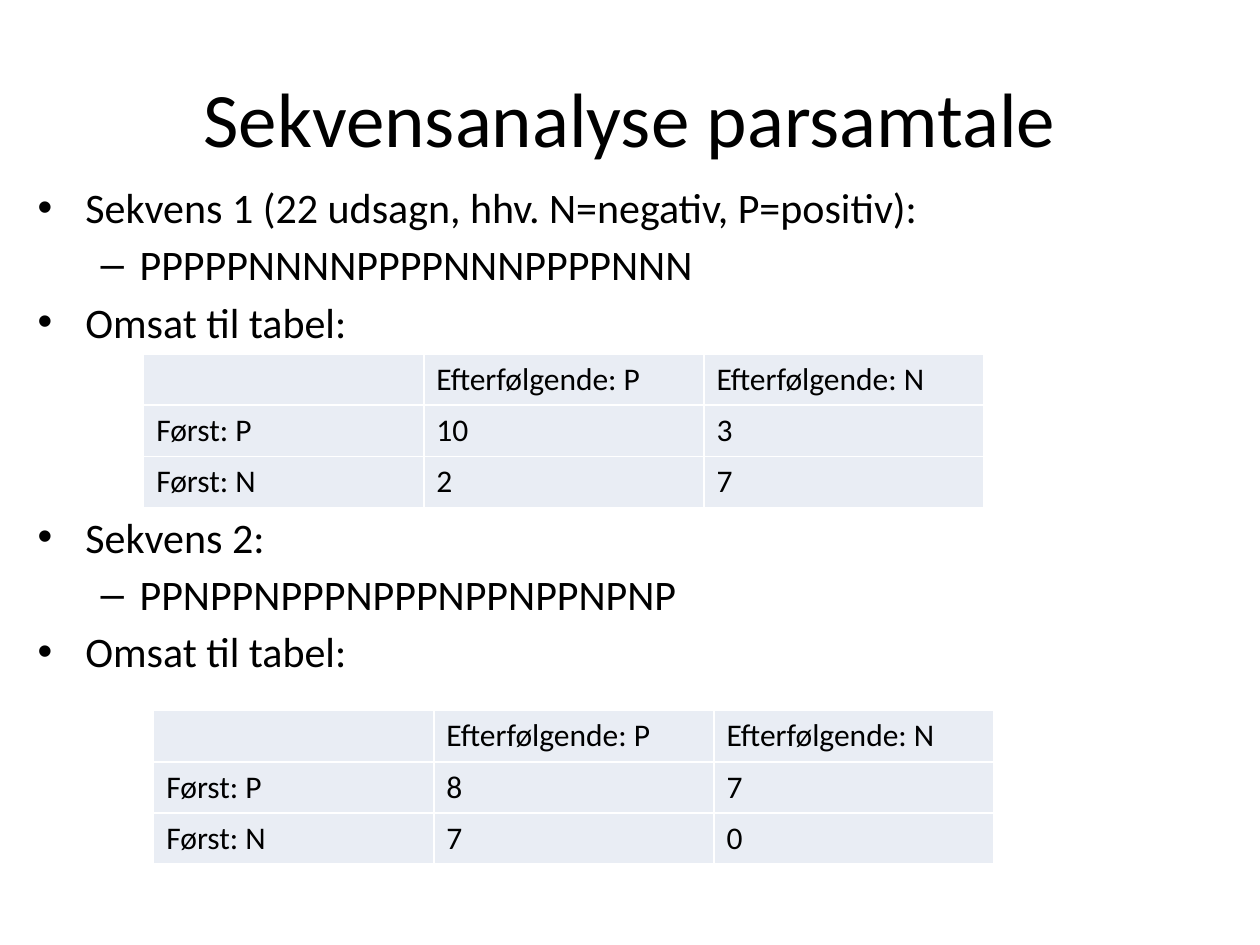
from lxml import etree
from pptx import Presentation
from pptx.dml.color import RGBColor
from pptx.enum.text import MSO_ANCHOR, PP_ALIGN
from pptx.oxml.ns import qn
from pptx.util import Inches, Pt

CENTER = PP_ALIGN.CENTER
LEFT = PP_ALIGN.LEFT
MIDDLE = MSO_ANCHOR.MIDDLE
TOP = MSO_ANCHOR.TOP
COLORS = {"text": "000000", "cell": "E9EDF4", "border": "FFFFFF"}


def write(paragraph, text, size, align=LEFT):
    paragraph.alignment = align
    run = paragraph.add_run()
    run.text = text
    for name, value in {"size": Pt(size), "name": "Calibri", "bold": False}.items():
        setattr(run.font, name, value)
    run.font.color.rgb = RGBColor.from_string(COLORS["text"])


def add_frame(left, top, width, height, anchor):
    frame = slide.shapes.add_textbox(
        Inches(left), Inches(top), Inches(width), Inches(height)
    ).text_frame
    frame.word_wrap = True
    frame.vertical_anchor = anchor
    return frame


prs = Presentation()
prs.slide_width = Inches(10)
prs.slide_height = Inches(7.5)
slide = prs.slides.add_slide(prs.slide_layouts[6])

title = add_frame(0.5, 0.3, 9, 1.25, MIDDLE)
write(title.paragraphs[0], "Sekvensanalyse parsamtale", 44, CENTER)

outline = [
    (0, "Sekvens 1 (22 udsagn, hhv. N=negativ, P=positiv):", 4),
    (1, "PPPPPNNNNPPPPNNNPPPPNNN", 4),
    (0, "Omsat til tabel:", 4),
    (0, "Sekvens 2:", 94),
    (1, "PPNPPNPPPNPPPNPPNPPNPNP", 4),
    (0, "Omsat til tabel:", 4),
]
bullets = [("•", 0.38, 0.38), ("–", 0.81, 0.31)]
body = add_frame(0.2, 1.39, 9, 4.95, TOP)
for index, (level, text, space_before) in enumerate(outline):
    point = body.add_paragraph() if index else body.paragraphs[0]
    write(point, text, 24)
    point.level = level
    point.space_before = Pt(space_before)
    mark, margin, hanging = bullets[level]
    properties = point._p.get_or_add_pPr()
    properties.set("marL", str(Inches(margin)))
    properties.set("indent", str(-Inches(hanging)))
    etree.SubElement(properties, qn("a:buFont"), typeface="Arial")
    etree.SubElement(properties, qn("a:buChar"), char=mark)

transitions = [
    (1.14, 2.81, [("10", "3"), ("2", "7")]),
    (1.22, 5.64, [("8", "7"), ("7", "0")]),
]
for left, top, (after_p, after_n) in transitions:
    rows = [
        ("", "Efterfølgende: P", "Efterfølgende: N"),
        ("Først: P", *after_p),
        ("Først: N", *after_n),
    ]
    table = slide.shapes.add_table(
        3, 3, Inches(left), Inches(top), Inches(6.67), Inches(1.22)
    ).table
    table.first_row = False
    table.horz_banding = False
    for row_index, values in enumerate(rows):
        for column_index, value in enumerate(values):
            cell = table.cell(row_index, column_index)
            if value:
                write(cell.text_frame.paragraphs[0], value, 18)
            cell_properties = cell._tc.get_or_add_tcPr()
            for side in ("lnL", "lnR", "lnT", "lnB"):
                border = etree.SubElement(cell_properties, qn("a:" + side), w=str(Pt(1)))
                border_fill = etree.SubElement(border, qn("a:solidFill"))
                etree.SubElement(border_fill, qn("a:srgbClr"), val=COLORS["border"])
            cell.fill.solid()
            cell.fill.fore_color.rgb = RGBColor.from_string(COLORS["cell"])

prs.save("out.pptx")
